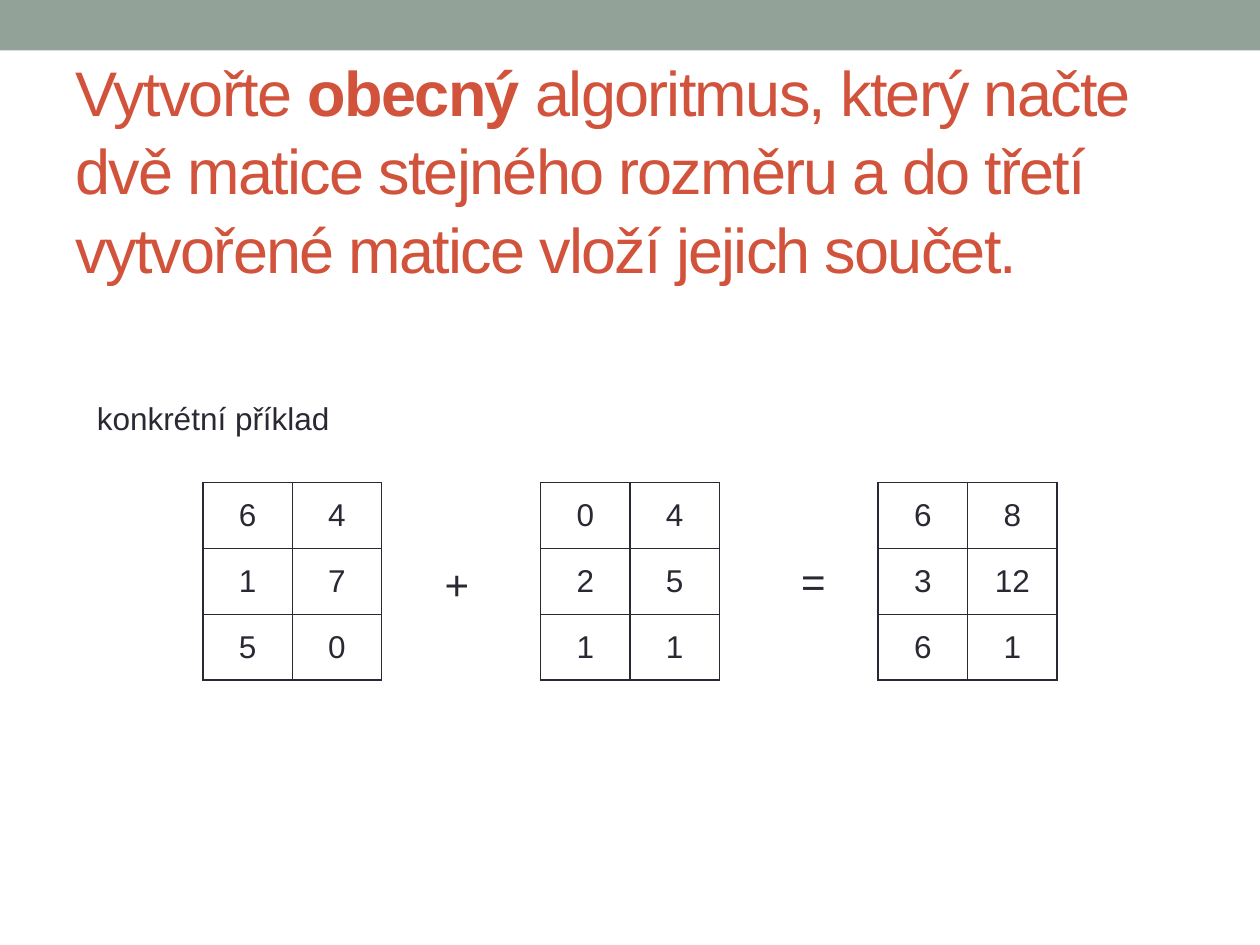
"""Builds a slide that sets a matrix addition task with a worked example."""
from dataclasses import dataclass
from typing import Any

from lxml import etree
from pptx import Presentation
from pptx.dml.color import RGBColor
from pptx.enum.shapes import MSO_SHAPE
from pptx.enum.text import MSO_ANCHOR, MSO_AUTO_SIZE, PP_ALIGN
from pptx.oxml.ns import qn
from pptx.util import Inches, Pt

RECTANGLE = MSO_SHAPE.RECTANGLE
MIDDLE = MSO_ANCHOR.MIDDLE
TOP = MSO_ANCHOR.TOP
NO_FIT = MSO_AUTO_SIZE.NONE
LEFT = PP_ALIGN.LEFT
CENTER = PP_ALIGN.CENTER
GRID_COLUMNS, GRID_ROWS = 100, 75
BORDER_SIDES = ("a:lnL", "a:lnR", "a:lnT", "a:lnB")


def color(hex_value):
    """Turn a hex string into a colour."""
    return RGBColor.from_string(hex_value)


def assign(target, values):
    """Set each named attribute on the target."""
    for name, value in values.items():
        setattr(target, name, value)


@dataclass
class Page:
    """Hold the style and the slide being filled."""

    slide: Any
    column: float
    row: float
    font: str = "Arial"
    ink: str = "292934"
    accent: str = "D2533C"
    band_fill: str = "93A299"
    paper: str = "FFFFFF"

    def box(self, left, top, width, height):
        """Convert grid columns and rows to slide lengths."""
        return (round(left * self.column), round(top * self.row),
                round(width * self.column), round(height * self.row))

    def styled_run(self, paragraph, text, size, ink, bold=False):
        """Add a styled run to a paragraph."""
        run = paragraph.add_run()
        run.text = text
        assign(run.font, {"name": self.font, "size": Pt(size), "bold": bold})
        run.font.color.rgb = color(ink)
        return run

    def band(self, height):
        """Draw the full-width band at the top."""
        band = self.slide.shapes.add_shape(RECTANGLE, *self.box(0, 0, GRID_COLUMNS, height))
        band.shadow.inherit = False
        band.fill.solid()
        band.fill.fore_color.rgb = color(self.band_fill)
        band.line.fill.background()

    def title(self, parts, place):
        """Fill the title with (text, bold) parts."""
        title = self.slide.shapes.title
        assign(title, dict(zip(("left", "top", "width", "height"), self.box(*place))))
        frame = title.text_frame
        assign(frame, {"word_wrap": True, "auto_size": NO_FIT, "vertical_anchor": MIDDLE})
        paragraph = frame.paragraphs[0]
        assign(paragraph, {"alignment": LEFT, "line_spacing": 1.04})
        for text, bold in parts:
            run = self.styled_run(paragraph, text, 36, self.accent, bold)
            run._r.get_or_add_rPr().set("spc", "-100")

    def label(self, text, size, place):
        """Add a line of text."""
        frame = self.slide.shapes.add_textbox(*self.box(*place)).text_frame
        assign(frame, {"word_wrap": True, "auto_size": NO_FIT, "vertical_anchor": TOP})
        self.styled_run(frame.paragraphs[0], text, size, self.ink)

    def border(self, cell):
        """Outline a cell on all four sides."""
        properties = cell._tc.get_or_add_tcPr()
        for position, side in enumerate(BORDER_SIDES):
            line = etree.Element(qn(side), w=str(Pt(1)))
            fill = etree.SubElement(line, qn("a:solidFill"))
            etree.SubElement(fill, qn("a:srgbClr"), val=self.ink)
            properties.insert(position, line)

    def matrix(self, values, left, top, cell_width, cell_height):
        """Draw a matrix as a bordered table."""
        row_count, column_count = len(values), len(values[0])
        place = self.box(left, top, cell_width * column_count, cell_height * row_count)
        table = self.slide.shapes.add_table(row_count, column_count, *place).table
        assign(table, {"first_row": False, "horz_banding": False})
        for row, numbers in enumerate(values):
            for column, number in enumerate(numbers):
                cell = table.cell(row, column)
                cell.vertical_anchor = MIDDLE
                cell.fill.solid()
                cell.fill.fore_color.rgb = color(self.paper)
                self.border(cell)
                paragraph = cell.text_frame.paragraphs[0]
                paragraph.alignment = CENTER
                self.styled_run(paragraph, str(number), 18, self.ink)


def main():
    """Build and save the slide."""
    deck = Presentation()
    assign(deck, {"slide_width": Inches(10), "slide_height": Inches(7.5)})
    page = Page(deck.slides.add_slide(deck.slide_layouts[5]),
                deck.slide_width / GRID_COLUMNS, deck.slide_height / GRID_ROWS)

    page.band(4)
    page.title([
        ("Vytvořte ", False),
        ("obecný", True),
        (" algoritmus, který načte dvě matice stejného rozměru a do třetí "
         "vytvořené matice vloží jejich součet.", False),
    ], (5, 5.8, 90, 15.1))

    first = [[6, 4], [1, 7], [5, 0]]
    second = [[0, 4], [2, 5], [1, 1]]
    total = [[a + b for a, b in zip(*rows)] for rows in zip(first, second)]
    for index, values in enumerate((first, second, total)):
        page.matrix(values, 16.1 + 26.8 * index, 38.3, 7.1, 5.23)

    page.label("+", 24, (34.3, 43.8, 3.1, 5))
    page.label("=", 24, (62.6, 43.6, 3.1, 5))
    page.label("konkrétní příklad", 18, (6.7, 31.2, 23.6, 4))
    deck.save("out.pptx")


if __name__ == "__main__":
    main()
